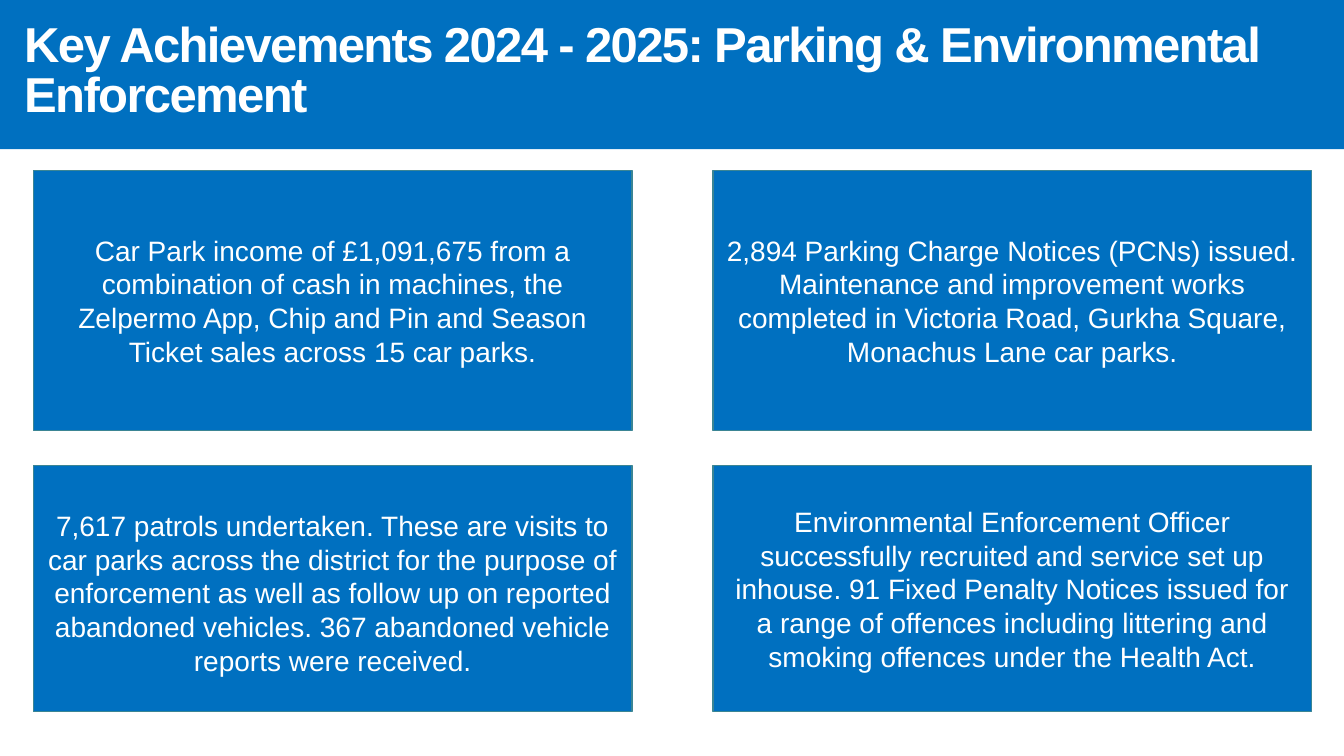
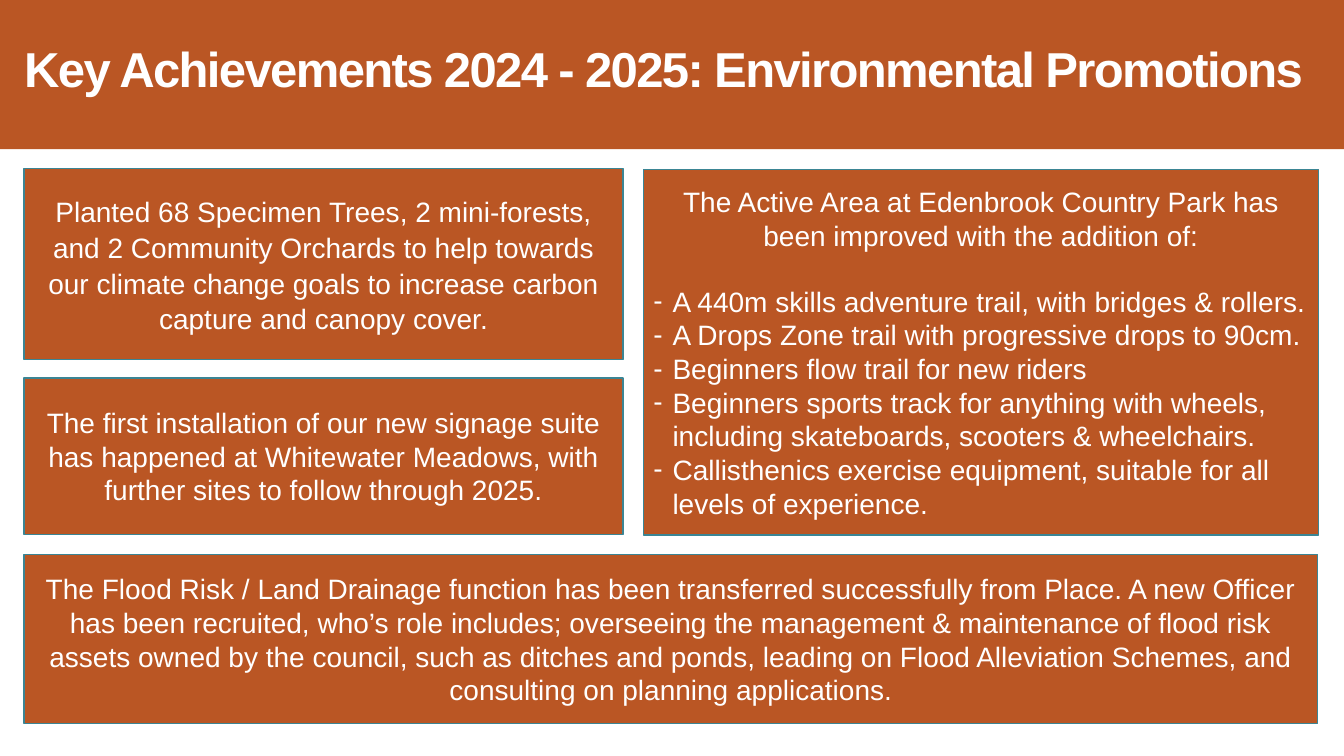
from dataclasses import dataclass

from lxml import etree
from pptx import Presentation
from pptx.dml.color import RGBColor
from pptx.enum.shapes import MSO_SHAPE
from pptx.enum.text import MSO_ANCHOR, MSO_AUTO_SIZE, PP_ALIGN
from pptx.oxml.ns import qn
from pptx.util import Inches, Pt

RECT = MSO_SHAPE.RECTANGLE
MIDDLE = MSO_ANCHOR.MIDDLE
NO_FIT = MSO_AUTO_SIZE.NONE
LEFT, CENTER = PP_ALIGN.LEFT, PP_ALIGN.CENTER

COLORS = {
    "parking": "0070C0",
    "promotions": "BA5624",
    "outline": "3B8594",
    "text": "FFFFFF",
}
FONT = "Arial"
SLIDE_W, SLIDE_H, BAND_H = 13.33, 7.5, 1.48
CARD_W = 5.94
BULLET_INDENT = 0.19
TITLE_ONLY, TITLE_AND_CONTENT = 5, 1


@dataclass
class Card:
    x: float
    y: float
    w: float
    h: float
    lines: tuple[str, ...]
    bullets: tuple[str, ...] = ()
    spacing: float | None = None  # exact line height in points
    top_inset: float = 0.05


@dataclass
class Page:
    title: str
    color: str
    cards: tuple[Card, ...]


def rgb(name: str) -> RGBColor:
    return RGBColor.from_string(COLORS[name])


def write(p, text: str, *, size=20, bold=False, align=CENTER, spacing=None,
          after=0, tracking=None, bullet=None) -> None:
    """Put formatted text into a paragraph."""
    r = p.add_run()
    r.text = text
    r.font.name, r.font.size, r.font.bold = FONT, Pt(size), bold
    r.font.color.rgb = rgb("text")
    if tracking is not None:
        r.font._element.set("spc", str(round(tracking * 100)))
    p.alignment = align
    p.space_before, p.space_after = Pt(0), Pt(after)
    if spacing is not None:
        p.line_spacing = spacing
    indent = Inches(BULLET_INDENT) if bullet else 0
    pPr = p._p.get_or_add_pPr()
    pPr.set("marL", str(indent))
    pPr.set("indent", str(-indent))
    if bullet:
        etree.SubElement(pPr, qn("a:buChar")).set("char", bullet)
    else:
        etree.SubElement(pPr, qn("a:buNone"))


def place(shape, x: float, y: float, w: float, h: float) -> None:
    shape.left, shape.top = Inches(x), Inches(y)
    shape.width, shape.height = Inches(w), Inches(h)


def setup_frame(shape):
    tf = shape.text_frame
    tf.word_wrap, tf.auto_size, tf.vertical_anchor = True, NO_FIT, MIDDLE
    return tf


def add_box(s, x: float, y: float, w: float, h: float):
    sp = s.shapes.add_shape(RECT, Inches(x), Inches(y), Inches(w), Inches(h))
    sp.shadow.inherit = False
    return sp


def paint(shape, color: str) -> None:
    shape.fill.solid()
    shape.fill.fore_color.rgb = rgb(color)


def add_header(s, page: Page) -> None:
    band = add_box(s, 0, 0, SLIDE_W, BAND_H)
    paint(band, page.color)
    band.line.fill.background()
    title = s.shapes.title
    title.element.addprevious(band.element)  # band goes behind the title
    place(title, 0.14, 0.09, 13.11, 1.26)
    tf = setup_frame(title)
    write(tf.paragraphs[0], page.title, size=35, bold=True, align=LEFT,
          spacing=0.85, tracking=-1.2)


def add_card(s, card: Card, color: str) -> None:
    box = (card.x, card.y, card.w, card.h)
    if card.bullets:  # a list goes in the body placeholder
        sp = s.placeholders[1]
        place(sp, *box)
    else:
        sp = add_box(s, *box)
    paint(sp, color)
    sp.line.color.rgb = rgb("outline")
    sp.line.width = Pt(1)
    tf = setup_frame(sp)
    tf.margin_top = Inches(card.top_inset)
    for i, text in enumerate(card.lines + card.bullets):
        p = tf.add_paragraph() if i else tf.paragraphs[0]
        if i >= len(card.lines):
            write(p, text, align=LEFT, bullet="-")
        else:
            write(p, text, after=23 if card.bullets else 0,
                  spacing=Pt(card.spacing) if card.spacing else None)


def add_page(prs, page: Page) -> None:
    has_list = any(card.bullets for card in page.cards)
    layout = TITLE_AND_CONTENT if has_list else TITLE_ONLY
    s = prs.slides.add_slide(prs.slide_layouts[layout])
    add_header(s, page)
    for card in page.cards:
        add_card(s, card, page.color)


# Card grid of the parking slide
COL_1, COL_2 = 0.33, 7.07
ROW_1, ROW_2 = 1.69, 4.62
ROW_1_H, ROW_2_H = 2.58, 2.44
# Left edge of the promotions slide
EDGE = 0.24

PAGES = (
    Page("Key Achievements 2024 - 2025: Parking & Environmental Enforcement", "parking", (
        Card(COL_1, ROW_1, CARD_W, ROW_1_H, (
            "Car Park income of £1,091,675 from a combination of cash in machines, the",
            "Zelpermo App, Chip and Pin and Season Ticket sales across 15 car parks.")),
        Card(COL_2, ROW_1, CARD_W, ROW_1_H, (
            "2,894 Parking Charge Notices (PCNs) issued.",
            "Maintenance and improvement works completed in Victoria Road, "
            "Gurkha Square, Monachus Lane car parks.")),
        Card(COL_1, ROW_2, CARD_W, ROW_2_H, (
            "7,617 patrols undertaken. These are visits to car parks across the district "
            "for the purpose of enforcement as well as follow up on reported abandoned "
            "vehicles. 367 abandoned vehicle reports were received.",), top_inset=0.13),
        Card(COL_2, ROW_2, CARD_W, ROW_2_H, (
            "Environmental Enforcement Officer successfully recruited and service set up "
            "inhouse. 91 Fixed Penalty Notices issued for",
            "a range of offences including littering and smoking offences under the "
            "Health Act.")),
    )),
    Page("Key Achievements 2024 - 2025: Environmental Promotions", "promotions", (
        Card(EDGE, 1.67, CARD_W, 1.9, (
            "Planted 68 Specimen Trees, 2 mini-forests, and 2 Community Orchards to help "
            "towards our climate change goals to increase carbon capture and canopy "
            "cover.",), spacing=25.5),
        Card(EDGE, 3.75, CARD_W, 1.55, (
            "The first installation of our new signage suite has happened at Whitewater "
            "Meadows, with further sites to follow through 2025.",)),
        Card(6.38, 1.68, 6.7, 3.63, (
            "The Active Area at Edenbrook Country Park has been improved with the "
            "addition of:",), bullets=(
            "A 440m skills adventure trail, with bridges & rollers.",
            "A Drops Zone trail with progressive drops to 90cm.",
            "Beginners flow trail for new riders",
            "Beginners sports track for anything with wheels, including skateboards, "
            "scooters & wheelchairs.",
            "Callisthenics exercise equipment, suitable for all levels of experience.")),
        Card(EDGE, 5.5, 12.83, 1.68, (
            "The Flood Risk / Land Drainage function has been transferred successfully "
            "from Place. A new Officer has been recruited, who’s role includes; "
            "overseeing the management & maintenance of flood risk assets owned by the "
            "council, such as ditches and ponds, leading on Flood Alleviation Schemes, "
            "and consulting on planning applications.",)),
    )),
)


def main() -> None:
    prs = Presentation()
    prs.slide_width, prs.slide_height = Inches(SLIDE_W), Inches(SLIDE_H)
    for page in PAGES:
        add_page(prs, page)
    prs.save("out.pptx")


if __name__ == "__main__":
    main()
